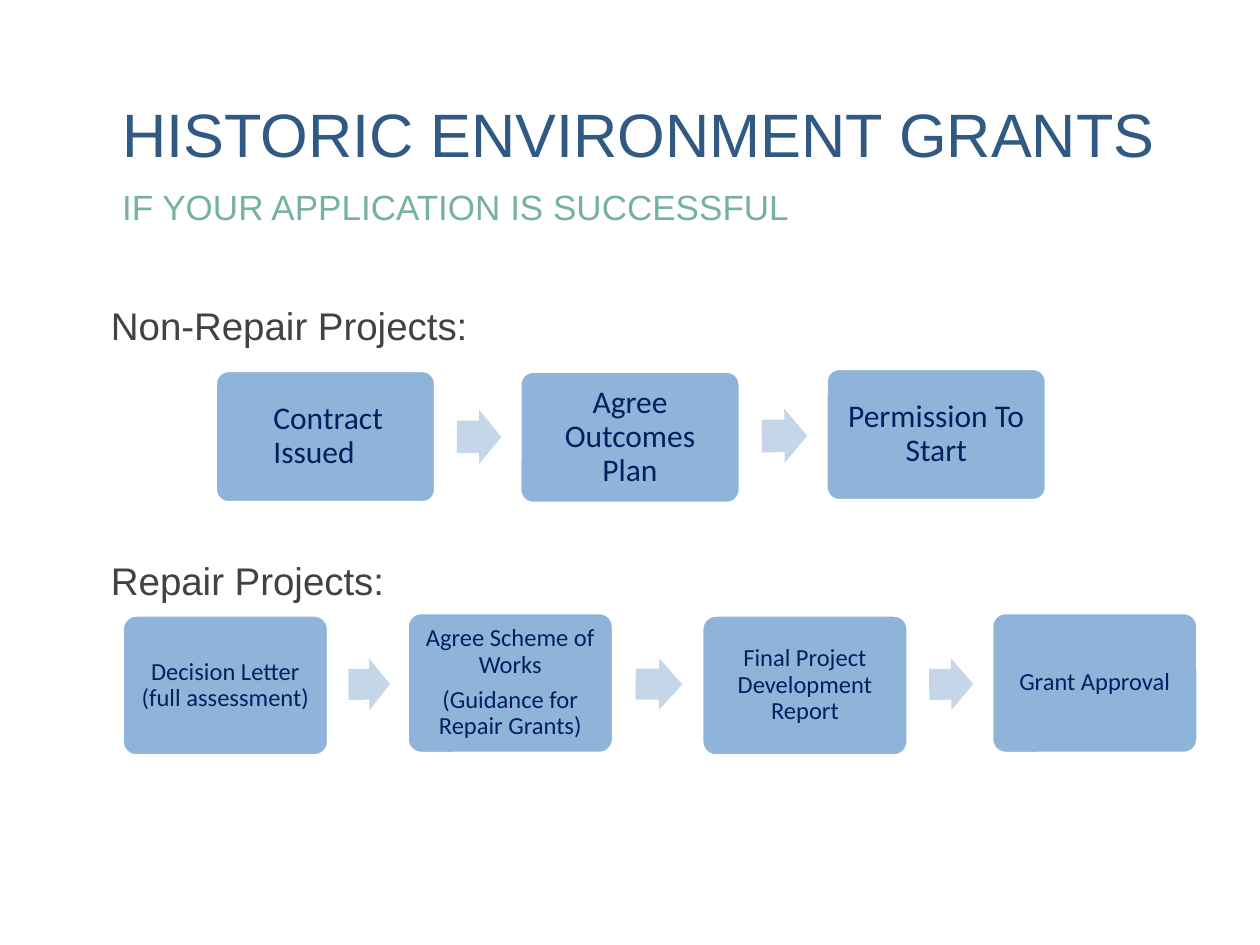
from math import atan2, degrees
from pptx import Presentation
from pptx.util import Pt
from pptx.dml.color import RGBColor as RGB
from pptx.enum.shapes import MSO_SHAPE as Shape
from pptx.enum.text import PP_ALIGN as Align, MSO_ANCHOR as Anchor

COLORS = {"title": "305983", "sub": "77B0A4", "head": "424242",
          "box": "8FB4D9", "edge": "FFFFFF", "arrow": "C6D6E9", "text": "002060"}

prs = Presentation()
prs.slide_width, prs.slide_height = Pt(720), Pt(540)
slide = prs.slides.add_slide(prs.slide_layouts[6])


def write(shape, lines, size, font, color, pad=0, align=Align.LEFT, space=1):
    frame = shape.text_frame
    frame.word_wrap = True
    frame.margin_left = frame.margin_right = Pt(pad)
    frame.margin_top = frame.margin_bottom = Pt(pad)
    for i, line in enumerate(lines):
        para = frame.add_paragraph() if i else frame.paragraphs[0]
        para.alignment = align
        para.line_spacing = space
        if i:
            para.space_before = Pt(0.35 * size)
        run = para.add_run()
        run.text = line
        run.font.size, run.font.name = Pt(size), font
        run.font.color.rgb = RGB.from_string(COLORS[color])


def draw(kind, x, y, w, h, color):
    shape = slide.shapes.add_shape(kind, Pt(x), Pt(y), Pt(w), Pt(h))
    shape.shadow.inherit = False
    shape.fill.solid()
    shape.fill.fore_color.rgb = RGB.from_string(COLORS[color])
    shape.line.fill.background()
    return shape


# Title, subtitle and section headings
for text, x, y, w, h, size, color in [
    ("HISTORIC ENVIRONMENT GRANTS", 69.8, 55.2, 616, 42, 35, "title"),
    ("IF YOUR APPLICATION IS SUCCESSFUL", 69.8, 106, 616, 26, 20, "sub"),
    ("Non-Repair Projects:", 63.4, 172.7, 620, 28, 22, "head"),
    ("Repair Projects:", 63.4, 318.4, 620, 28, 22, "head"),
]:
    label = slide.shapes.add_textbox(Pt(x), Pt(y), Pt(w), Pt(h))
    write(label, [text], size, "Arial", color)

# Each flow: box size, text size, arrow height, then steps as (x, y, lines)
flows = [
    (126, 75.6, 18, 31, [
        (123, 211.7, ["Contract Issued"]),
        (297, 212.1, ["Agree Outcomes Plan"]),
        (472, 210.5, ["Permission To Start"])]),
    (118, 80.6, 14, 29.5, [
        (69.8, 351.4, ["Decision Letter (full assessment)"]),
        (232.6, 350, ["Agree Scheme of Works", "(Guidance for Repair Grants)"]),
        (401, 351.4, ["Final Project Development Report"]),
        (566.6, 350, ["Grant Approval"])]),
]
for w, h, size, tall, steps in flows:
    for x, y, lines in steps:
        box = draw(Shape.ROUNDED_RECTANGLE, x, y, w, h, "box")
        box.adjustments[0] = 0.1
        box.line.color.rgb = RGB.from_string(COLORS["edge"])
        box.line.width = Pt(2)
        box.text_frame.vertical_anchor = Anchor.MIDDLE
        left = lines == ["Contract Issued"]
        write(box, lines, size, "Calibri", "text", 6,
              Align.LEFT if left else Align.CENTER, 0.9)
        if left:
            box.text_frame.margin_left = Pt(31)

    # An arrow sits midway in each gap and tilts along the line between boxes
    for (x1, y1, _), (x2, y2, _) in zip(steps, steps[1:]):
        wide = 0.53 * (x2 - x1 - w)
        mid_x = (x1 + x2 + w) / 2 + 0.8
        mid_y = (y1 + y2 + h) / 2
        arrow = draw(Shape.RIGHT_ARROW, mid_x - wide / 2, mid_y - tall / 2,
                     wide, tall, "arrow")
        arrow.adjustments[0], arrow.adjustments[1] = 0.6, 0.5
        arrow.rotation = round(degrees(atan2(y2 - y1, x2 - x1)), 1)

prs.save("out.pptx")
